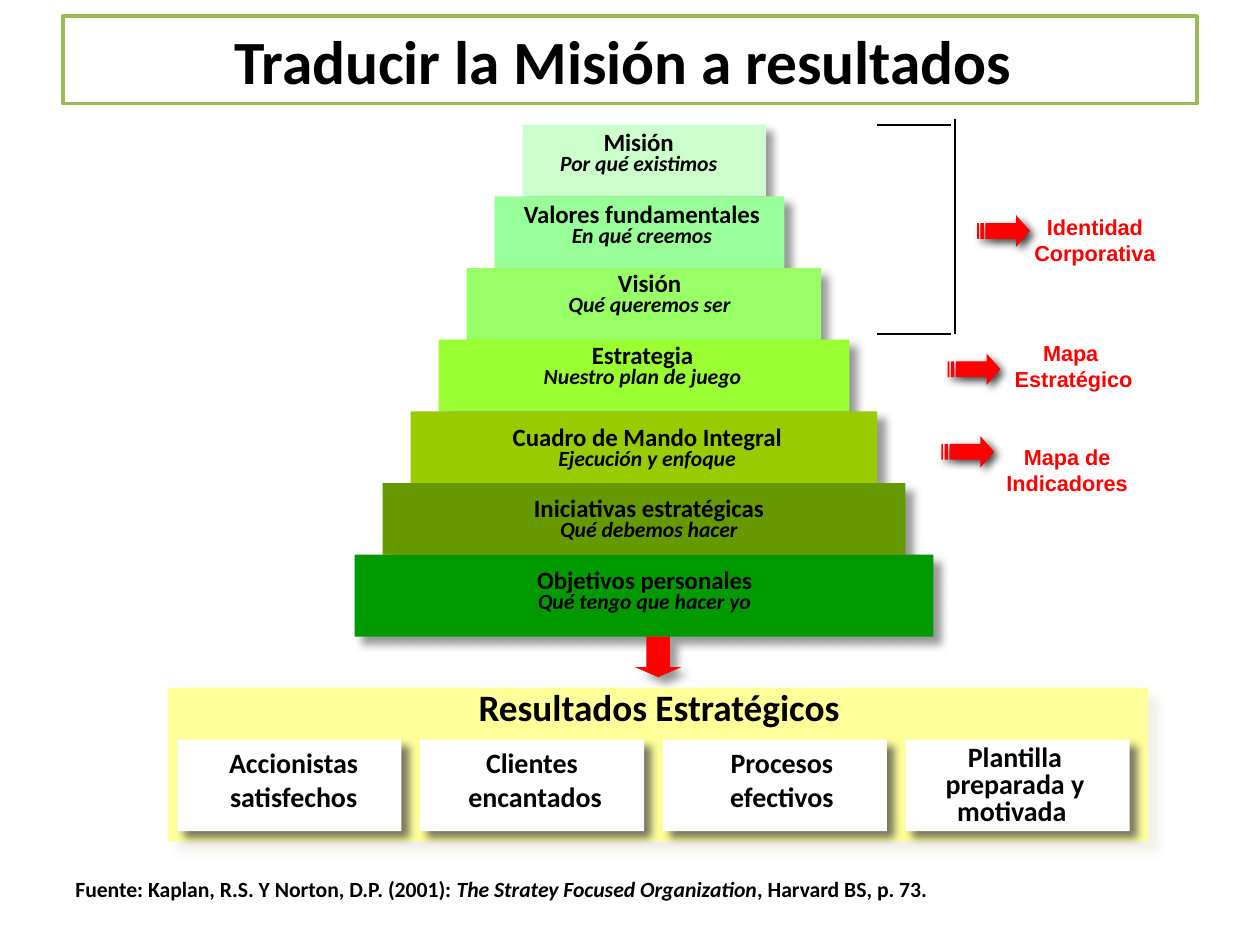
from collections import namedtuple

import pptx
import pptx.dml.color
import pptx.enum.shapes
import pptx.enum.text
import pptx.oxml
import pptx.oxml.ns
import pptx.util

Pt = pptx.util.Pt
RGB = pptx.dml.color.RGBColor.from_string
MSO = pptx.enum.shapes.MSO_SHAPE
ALIGN = pptx.enum.text.PP_ALIGN

Theme = namedtuple(
    "Theme", "font label_font ink red white panel frame tiers "
    "tier_shadow panel_shadow card_shadow "
    "title heading card tier small")
theme = Theme(
    font="Calibri", label_font="Arial", ink="000000", red="FF0000",
    white="FFFFFF", panel="FFFF99", frame="9BBB59",
    tiers=["CCFFCC", "99FF99", "99FF66", "99FF33", "99CC00", "669900", "009900"],
    tier_shadow="777777", panel_shadow="EEECE1", card_shadow="4D4D4D",
    title=35.1, heading=21.3, card=16, tier=14.2, small=12.4)


def write(tf, paragraphs, size, font=theme.font, color=theme.ink,
          align=ALIGN.CENTER, spacing=None, wrap=False):
    """Fill a text frame; a paragraph is a list of (text, italic, size or None)."""
    tf.word_wrap = wrap
    for i, runs in enumerate(paragraphs):
        p = tf.paragraphs[0] if i == 0 else tf.add_paragraph()
        p.alignment = align
        if spacing:
            p.line_spacing = spacing
        for text, italic, own_size in runs:
            r = p.add_run()
            r.text = text
            r.font.name = font
            r.font.size = Pt(own_size or size)
            r.font.bold = True
            r.font.italic = italic
            r.font.color.rgb = RGB(color)


def paint(sp, fill, shadow, dist=5.7):
    """Fill a shape without outline and give it a soft shadow to the lower right."""
    sp.fill.solid()
    sp.fill.fore_color.rgb = RGB(fill)
    sp.line.fill.background()
    sp.shadow.inherit = False
    effects = sp._element.spPr.find(pptx.oxml.ns.qn("a:effectLst"))
    effects.append(pptx.oxml.parse_xml(
        f'<a:outerShdw {pptx.oxml.ns.nsdecls("a")} blurRad="{Pt(5)}" '
        f'dist="{Pt(dist)}" dir="2700000" algn="ctr" rotWithShape="0">'
        f'<a:srgbClr val="{shadow}"><a:alpha val="75000"/></a:srgbClr>'
        '</a:outerShdw>'))


prs = pptx.Presentation()
prs.slide_width, prs.slide_height = Pt(720), Pt(540)
slide = prs.slides.add_slide(prs.slide_layouts[5])
shapes = slide.shapes

# Title
title = shapes.title
title.left, title.top, title.width, title.height = Pt(36), Pt(9.2), Pt(648), Pt(50)
title.fill.solid()
title.fill.fore_color.rgb = RGB(theme.white)
title.line.color.rgb = RGB(theme.frame)
title.line.width = Pt(2)
title.text_frame.auto_size = pptx.enum.text.MSO_AUTO_SIZE.NONE
title.text_frame.vertical_anchor = pptx.enum.text.MSO_ANCHOR.MIDDLE
write(title.text_frame, [[("Traducir la Misión a resultados ", False, None)]],
      theme.title, wrap=True)

# Pyramid: name, question, tier width, text centre, text top
tiers = [
    ("Misión", "Por qué existimos", 139, 365, 72.7),
    ("Valores fundamentales", "En qué creemos", 165.6, 366.8, 113.8),
    ("Visión", "Qué queremos ser", 202.5, 371.2, 153.4),
    ("Estrategia", "Nuestro plan de juego", 234.7, 367.2, 194.4),
    ("Cuadro de Mando Integral", "Ejecución y enfoque", 266.6, 369.8, 241.2),
    ("Iniciativas estratégicas", "Qué debemos hacer", 298.7, 370.8, 282.2),
    ("Objetivos personales", "Qué tengo que hacer yo", 330.7, 368.3, 323.3),
]
for i, (tier, fill) in enumerate(zip(tiers, theme.tiers)):
    height = 46.8 if i == len(tiers) - 1 else 41
    sp = shapes.add_shape(MSO.RECTANGLE, Pt(298.7 - 16 * i), Pt(71.3 + 40.95 * i),
                          Pt(tier[2]), Pt(height))
    paint(sp, fill, theme.tier_shadow)

sp = shapes.add_shape(MSO.DOWN_ARROW, Pt(362.7), Pt(363.8), Pt(26.8), Pt(23.2))
sp.adjustments[0], sp.adjustments[1] = 0.5, 0.25
paint(sp, theme.red, theme.tier_shadow)

for name, question, _, centre, top in tiers:
    box = shapes.add_textbox(Pt(centre - 90), Pt(top), Pt(180), Pt(31.7))
    write(box.text_frame, [[(name, False, None)], [(question, True, theme.small)]],
          theme.tier, spacing=0.75)

# Strategic results
sp = shapes.add_shape(MSO.RECTANGLE, Pt(96), Pt(393), Pt(560), Pt(87.8))
paint(sp, theme.panel, theme.panel_shadow, dist=7.1)
box = shapes.add_textbox(Pt(266.4), Pt(387.4), Pt(265.7), Pt(33))
write(box.text_frame, [[("Resultados Estratégicos", False, None)]],
      theme.heading, align=ALIGN.LEFT)

cards = [
    (["Accionistas", "satisfechos"], 167.8, None),
    (["Clientes ", "encantados"], 305.8, None),
    (["Procesos", "efectivos"], 446.8, None),
    (["Plantilla", "preparada y", "motivada "], 580, 0.8),
]
for i, (lines, centre, spacing) in enumerate(cards):
    sp = shapes.add_shape(MSO.RECTANGLE, Pt(101.4 + 138.7 * i), Pt(422.7),
                          Pt(128), Pt(52.3))
    paint(sp, theme.white, theme.card_shadow)
    box = shapes.add_textbox(Pt(centre - 53), Pt(422.7), Pt(106), Pt(46))
    write(box.text_frame, [[(line, False, None)] for line in lines],
          theme.card, spacing=spacing)

# Source
box = shapes.add_textbox(Pt(36), Pt(496.8), Pt(508.3), Pt(22.3))
write(box.text_frame,
      [[("Fuente: Kaplan, R.S. Y Norton, D.P. (2001): ", False, None),
        ("The Stratey Focused Organization", True, None),
        (", Harvard BS, p. 73.", False, None)]],
      theme.small, align=ALIGN.LEFT)

# Bracket around the first three tiers
for x1, y1, x2, y2 in [(545.8, 67.9, 545.8, 190.8),
                       (543.6, 190.8, 501.4, 190.8),
                       (543.6, 71.4, 501.4, 71.4)]:
    line = shapes.add_connector(pptx.enum.shapes.MSO_CONNECTOR.STRAIGHT,
                                Pt(x1), Pt(y1), Pt(x2), Pt(y2))
    line.line.color.rgb = RGB(theme.ink)
    line.line.width = Pt(1.5)
    line._element.spPr.append(pptx.oxml.parse_xml(
        f'<a:effectLst {pptx.oxml.ns.nsdecls("a")}/>'))

# Labels, each with a striped arrow: lines, text centre, text top, arrow left, arrow top
labels = [
    (["Identidad", "Corporativa"], 625.7, 118.8, 558.4, 123),
    (["Mapa ", "Estratégico"], 613.5, 190.8, 541.5, 202),
    (["Mapa de", "Indicadores"], 609.8, 249.8, 537.9, 249.2),
]
arrow_head = [(236, 25), (50, 25), (50, 75), (236, 75), (236, 100), (320, 50)]
for lines, centre, top, arrow_left, arrow_top in labels:
    box = shapes.add_textbox(Pt(centre - 55), Pt(top), Pt(110), Pt(37.4))
    write(box.text_frame, [[(line, False, None)] for line in lines],
          theme.small, font=theme.label_font, color=theme.red)
    builder = shapes.build_freeform(236, 0, scale=(Pt(30.2) / 320, Pt(18) / 100))
    builder.add_line_segments(arrow_head, close=True)
    for left, right in [(20, 40), (0, 10)]:
        builder.move_to(left, 25)
        builder.add_line_segments([(left, 75), (right, 75), (right, 25)], close=True)
    paint(builder.convert_to_shape(Pt(arrow_left), Pt(arrow_top)),
          theme.red, theme.ink, dist=3)

prs.save("out.pptx")
